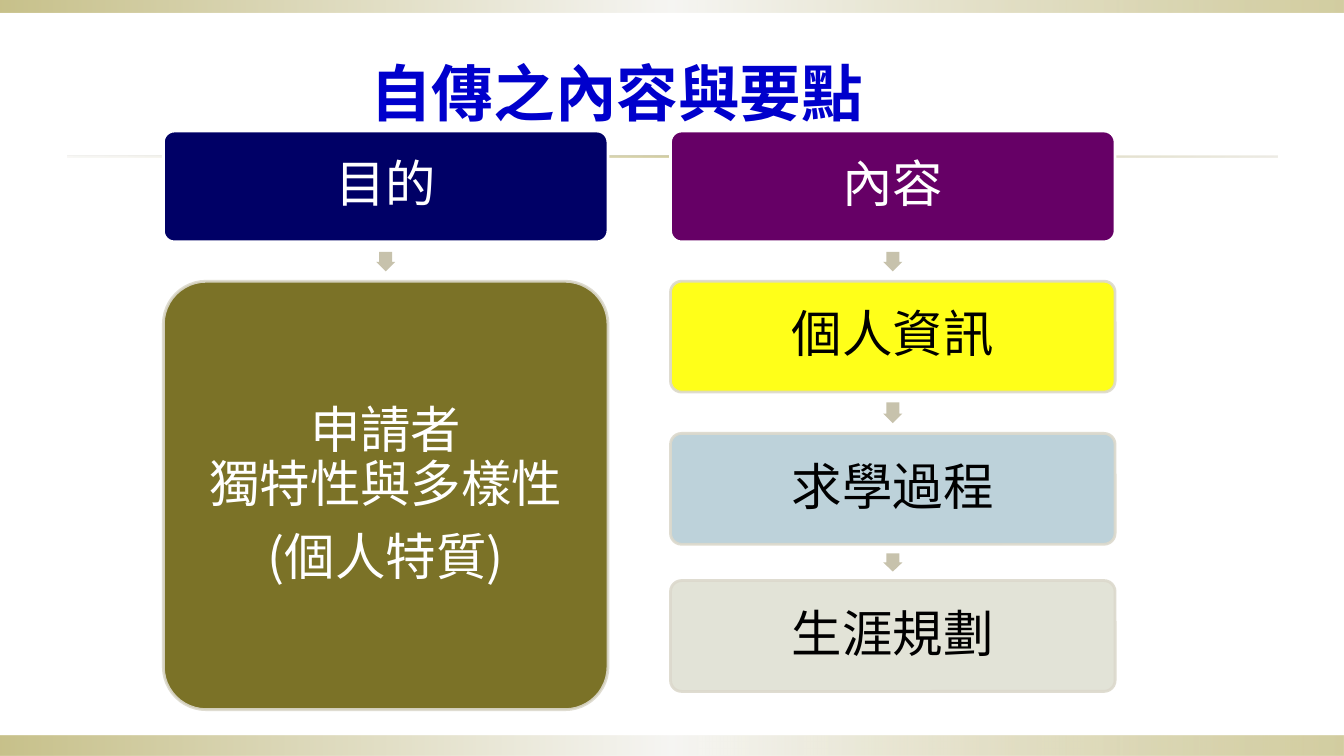
from lxml import etree
from pptx import Presentation
from pptx.dml.color import RGBColor
from pptx.enum.shapes import MSO_SHAPE
from pptx.enum.text import MSO_ANCHOR, PP_ALIGN
from pptx.oxml.ns import qn
from pptx.util import Inches, Pt

RECTANGLE = MSO_SHAPE.RECTANGLE
ROUNDED = MSO_SHAPE.ROUNDED_RECTANGLE
ARROW = MSO_SHAPE.RIGHT_ARROW
MIDDLE = MSO_ANCHOR.MIDDLE
CENTER = PP_ALIGN.CENTER

THEME = {
    "font": "Noto Sans CJK SC",
    "title_size": 44, "box_size": 36,
    "title": "0000CC", "light": "FFFFFF", "dark": "000000",
    "navy": "000066", "purple": "660066", "olive": "6D6310",
    "yellow": "FFFF00", "blue": "B6CED7", "sage": "DFE1D3",
    "border": "DCD9CC", "arrow": "C7C2AC",
    # Gradient stops: position %, colour, opacity %
    "band": [(0, "918415", 50), (50, "EEEDE8", 100 - 50), (100, "918415", 40)],
    "rule": [(0, "DCD9CC", 20), (50, "918415", 40), (100, "DCD9CC", 50)],
}

TITLE = "自傳之內容與要點"
# Each column: left edge, then boxes as (paragraphs, fill, text colour, top, height)
COLUMNS = [
    (1.62, [
        (["目的"], "navy", "light", 1.3, 1.1),
        (["申請者\v獨特性與多樣性", "(個人特質)"], "olive", "light", 2.79, 4.25),
    ]),
    (6.65, [
        (["內容"], "purple", "light", 1.3, 1.1),
        (["個人資訊"], "yellow", "dark", 2.79, 1.1),
        (["求學過程"], "blue", "dark", 4.3, 1.1),
        (["生涯規劃"], "sage", "dark", 5.76, 1.1),
    ]),
]
BOX_WIDTH = 4.41
BANDS = [  # left, top, width, height, gradient
    (0, 7.3, 13.33, 0.2, "band"),
    (0, 0, 13.33, 0.12, "band"),
    (0.67, 1.54, 12, 0.02, "rule"),
]


def color(name):
    return RGBColor.from_string(THEME[name])


def set_opacity(fill_color_element, percent):
    etree.SubElement(fill_color_element, qn("a:alpha"), val=str(percent * 1000))


def add_plain_shape(slide, kind, left, top, width, height):
    shape = slide.shapes.add_shape(
        kind, Inches(left), Inches(top), Inches(width), Inches(height))
    shape.shadow.inherit = False
    shape.line.fill.background()
    return shape


def add_gradient_band(slide, left, top, width, height, gradient):
    shape = add_plain_shape(slide, RECTANGLE, left, top, width, height)
    shape.fill.gradient()
    shape.fill.gradient_angle = 0
    stops = shape._element.spPr.find(qn("a:gradFill")).find(qn("a:gsLst"))
    for stop in list(stops):
        stops.remove(stop)
    for position, value, opacity in THEME[gradient]:
        stop = etree.SubElement(stops, qn("a:gs"), pos=str(position * 1000))
        set_opacity(etree.SubElement(stop, qn("a:srgbClr"), val=value), opacity)


def write_text(shape, paragraphs, *, size, text_color, bold=False,
               inset=0.05, line_spacing=None, space_after=0):
    frame = shape.text_frame
    frame.word_wrap = True
    frame.vertical_anchor = MIDDLE
    frame.margin_left = frame.margin_right = Inches(inset)
    frame.margin_top = frame.margin_bottom = Inches(0.05)
    for index, text in enumerate(paragraphs):
        paragraph = frame.add_paragraph() if index else frame.paragraphs[0]
        paragraph.text = text
        paragraph.alignment = CENTER
        paragraph.line_spacing = line_spacing
        paragraph.space_after = Pt(space_after)
        for run in paragraph.runs:
            run.font.size = Pt(size)
            run.font.bold = bold
            run.font.color.rgb = color(text_color)
            run.font.name = THEME["font"]
            etree.SubElement(run.font._element, qn("a:ea"), typeface=THEME["font"])


def add_box(slide, left, box, is_header):
    paragraphs, fill, text_color, top, height = box
    shape = add_plain_shape(slide, ROUNDED, left, top, BOX_WIDTH, height)
    shape.adjustments[0] = 0.1
    shape.fill.solid()
    shape.fill.fore_color.rgb = color(fill)
    shape.line.color.rgb = color("light" if is_header else "border")
    shape.line.width = Pt(2)
    if not is_header:
        for solid in shape._element.spPr.iter(qn("a:solidFill")):
            set_opacity(solid[0], 90)
    write_text(shape, paragraphs, size=THEME["box_size"], text_color=text_color,
               inset=0.1, line_spacing=0.9, space_after=12.6)


def add_down_arrow(slide, center, gap_top, gap_bottom):
    """Place an arrow, half as long as the gap, in the middle of the gap."""
    length, thickness = (gap_bottom - gap_top) / 2, 0.19
    middle = (gap_top + gap_bottom) / 2
    shape = add_plain_shape(slide, ARROW, center - length / 2,
                            middle - thickness / 2, length, thickness)
    shape.rotation = 90
    shape.adjustments[0] = 0.67
    shape.adjustments[1] = 0.5
    shape.fill.solid()
    shape.fill.fore_color.rgb = color("arrow")


def main():
    presentation = Presentation()
    presentation.slide_width = Inches(13.33)
    presentation.slide_height = Inches(7.5)
    slide = presentation.slides.add_slide(presentation.slide_layouts[6])

    for band in BANDS:
        add_gradient_band(slide, *band)

    title = slide.shapes.add_textbox(
        Inches(1.42), Inches(0.19), Inches(9.4), Inches(1.44))
    write_text(title, [TITLE], size=THEME["title_size"], text_color="title",
               bold=True, inset=0.1)

    for left, boxes in COLUMNS:
        previous_bottom = None
        for box in boxes:
            top, height = box[-2:]
            is_header = previous_bottom is None
            if not is_header:
                add_down_arrow(slide, left + BOX_WIDTH / 2, previous_bottom, top)
            add_box(slide, left, box, is_header)
            previous_bottom = top + height

    presentation.save("out.pptx")


if __name__ == "__main__":
    main()
